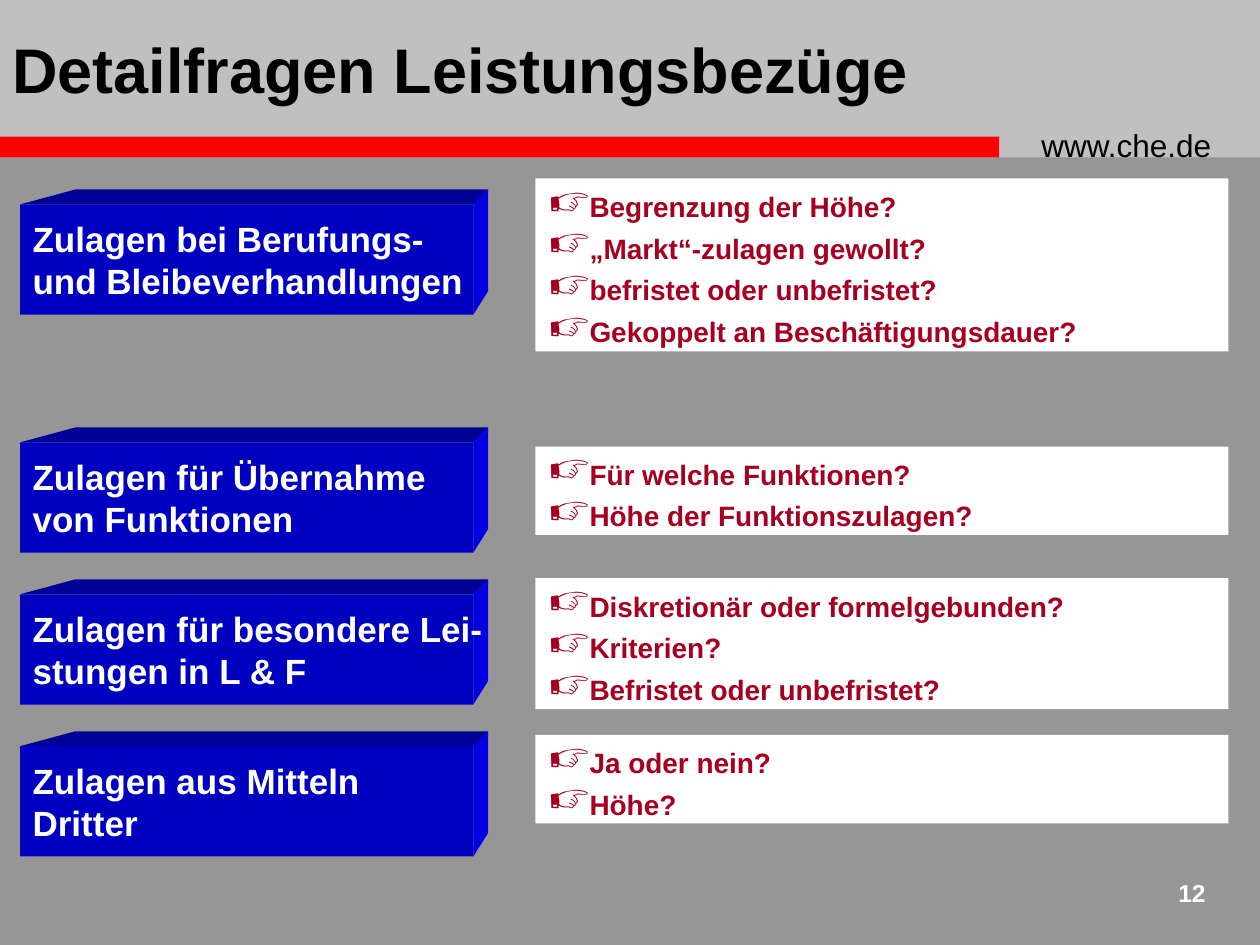
"""Build the slide on detailed questions about performance-related pay."""
import pptx
import pptx.dml.color
import pptx.enum.shapes
import pptx.enum.text
import pptx.oxml.ns
import pptx.util
from lxml import etree

Pt = pptx.util.Pt
ANCHOR = pptx.enum.text.MSO_ANCHOR
ALIGN = pptx.enum.text.PP_ALIGN

TITLE = "Detailfragen Leistungsbezüge"
SITE = "www.che.de"
PAGE = "12"
ROWS = [
    (116.8, "Zulagen bei Berufungs-\vund Bleibeverhandlungen", 102, 98.8,
     ["Begrenzung der Höhe?", "„Markt“-zulagen gewollt?",
      "befristet oder unbefristet?", "Gekoppelt an Beschäftigungsdauer?"]),
    (252.8, "Zulagen für Übernahme\vvon Funktionen", 255.2, 50.5,
     ["Für welche Funktionen?", "Höhe der Funktionszulagen?"]),
    (339.6, "Zulagen für besondere Lei-\vstungen in L & F", 330.4, 74.8,
     ["Diskretionär oder formelgebunden?", "Kriterien?", "Befristet oder unbefristet?"]),
    (426.4, "Zulagen aus Mitteln\vDritter", 420, 50.5,
     ["Ja oder nein?", "Höhe?"]),
]
BLOCK_LEFT, BLOCK_WIDTH, BLOCK_HEIGHT = 11.5, 259, 63
DEPTH, TOP_INSET, SIDE_RISE = 8.5, 31.5, 13.5
ANSWER_LEFT, ANSWER_WIDTH = 306, 396


def rgb(color):
    return pptx.dml.color.RGBColor.from_string(color)


def paint(sp, color):
    sp.shadow.inherit = False
    sp.fill.solid()
    sp.fill.fore_color.rgb = rgb(color)
    sp.line.fill.background()
    return sp


def add_rect(s, x, y, w, h, color):
    kind = pptx.enum.shapes.MSO_SHAPE.RECTANGLE
    return paint(s.shapes.add_shape(kind, Pt(x), Pt(y), Pt(w), Pt(h)), color)


def add_face(s, points, color):
    corners = [(Pt(x), Pt(y)) for x, y in points]
    builder = s.shapes.build_freeform(*corners[0])
    builder.add_line_segments(corners[1:])
    paint(builder.convert_to_shape(), color)


def write(sp, lines, size, color, bold=True, align=ALIGN.LEFT, anchor=ANCHOR.MIDDLE, wrap=True):
    tf = sp.text_frame
    tf.word_wrap = wrap
    tf.vertical_anchor = anchor
    for i, line in enumerate(lines):
        p = tf.paragraphs[0] if i == 0 else tf.add_paragraph()
        p.text = line
        p.alignment = align
        p.font.size = Pt(size)
        p.font.name = "Arial"
        p.font.bold = bold
        p.font.color.rgb = rgb(color)
    return tf


def add_text(s, x, y, w, h, text, size, color, **style):
    write(s.shapes.add_textbox(Pt(x), Pt(y), Pt(w), Pt(h)), [text], size, color, **style)


def add_bullet(p, color):
    qn = pptx.oxml.ns.qn
    pPr = p._p.get_or_add_pPr()
    pPr.set("marL", "0")
    pPr.set("indent", "0")
    marks = [etree.Element(qn("a:buClr")), etree.Element(qn("a:buSzPct"), val="150000"),
             etree.Element(qn("a:buChar"), char="☞")]
    etree.SubElement(marks[0], qn("a:srgbClr"), val=color)
    for i, mark in enumerate(marks):
        pPr.insert(i, mark)


def add_block(s, top, text):
    left, right = BLOCK_LEFT, BLOCK_LEFT + BLOCK_WIDTH
    bottom, back, back_top = top + BLOCK_HEIGHT, right + DEPTH, top - DEPTH
    add_face(s, [(left, top), (left + TOP_INSET, back_top), (back, back_top), (right, top)], "000096")
    add_face(s, [(right, top), (back, back_top), (back, bottom - SIDE_RISE), (right, bottom)], "0000E1")
    sp = add_rect(s, left, top, BLOCK_WIDTH, BLOCK_HEIGHT, "0000C0")
    write(sp, [text], 20, "FFFFFF", wrap=False)


def add_questions(s, top, height, questions):
    sp = add_rect(s, ANSWER_LEFT, top, ANSWER_WIDTH, height, "FFFFFF")
    tf = write(sp, questions, 16, "A50021")
    tf.margin_top = Pt(8)
    for i, p in enumerate(tf.paragraphs):
        add_bullet(p, "A50021")
        if i:
            p.space_before = Pt(4.6)


def main():
    prs = pptx.Presentation()
    prs.slide_width, prs.slide_height = Pt(720), Pt(540)
    s = prs.slides.add_slide(prs.slide_layouts[6])
    s.background.fill.solid()
    s.background.fill.fore_color.rgb = rgb("969696")
    add_rect(s, 0, 0, 720, 90, "C0C0C0")
    add_rect(s, 0, 78, 571, 12, "FF0000")
    add_text(s, 588, 68, 126, 29, SITE, 18, "000000", bold=False)
    add_text(s, 654, 498, 42, 30, PAGE, 14, "FFFFFF", align=ALIGN.RIGHT, anchor=ANCHOR.TOP)
    add_text(s, 0, 0, 582, 78, TITLE, 36, "000000")
    for block_top, label, top, height, questions in ROWS:
        add_block(s, block_top, label)
        add_questions(s, top, height, questions)
    prs.save("out.pptx")


if __name__ == "__main__":
    main()
